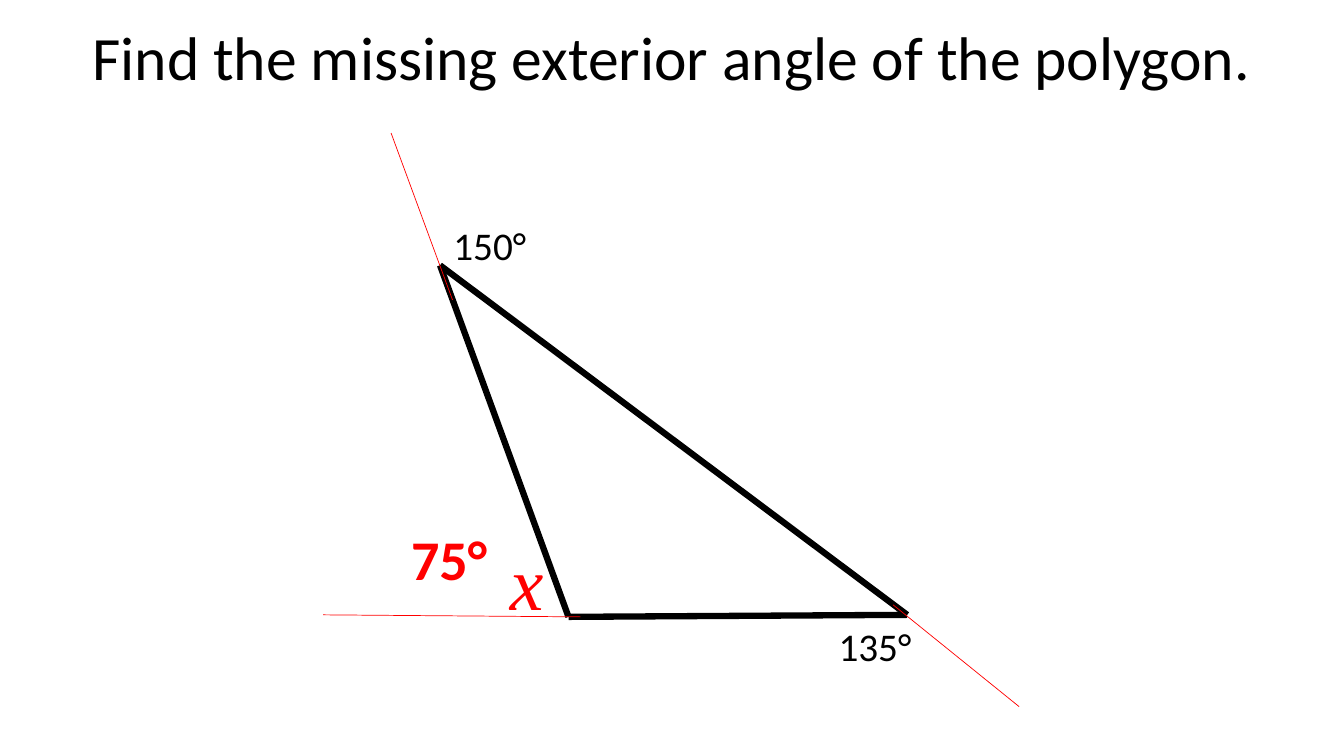
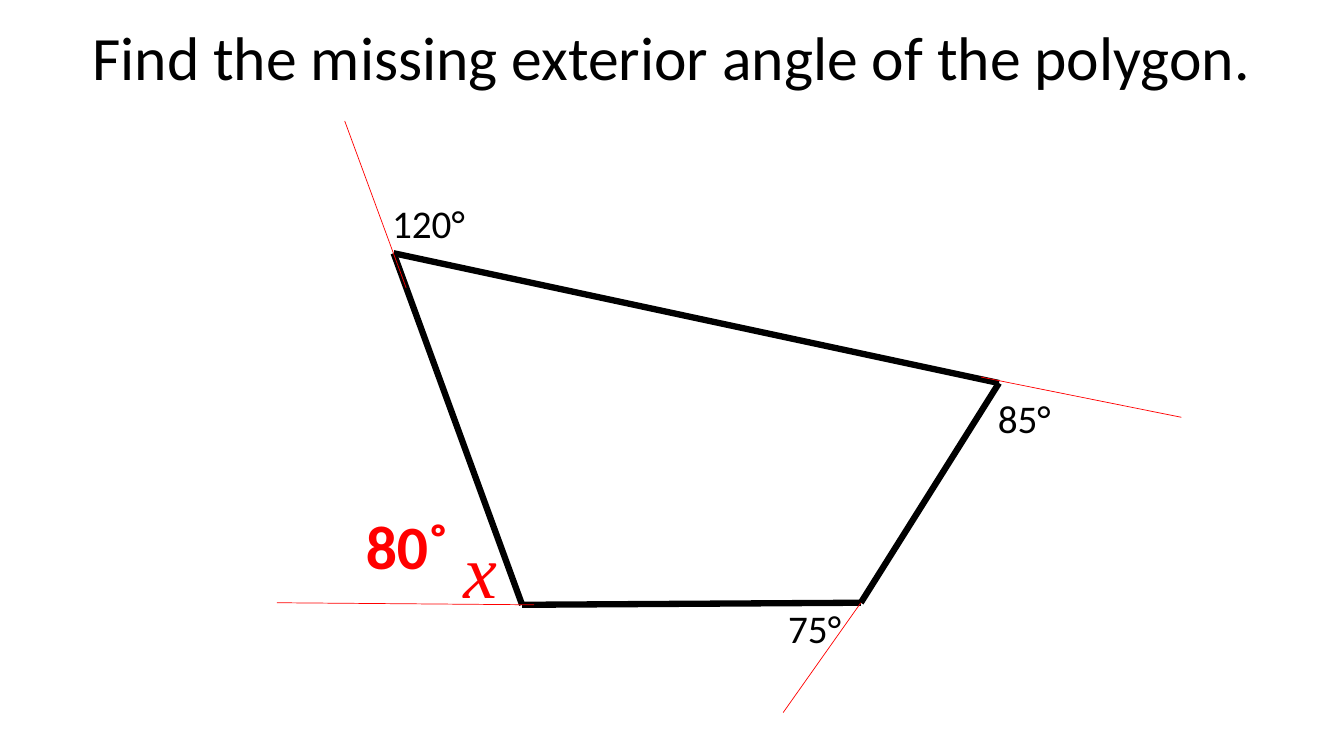
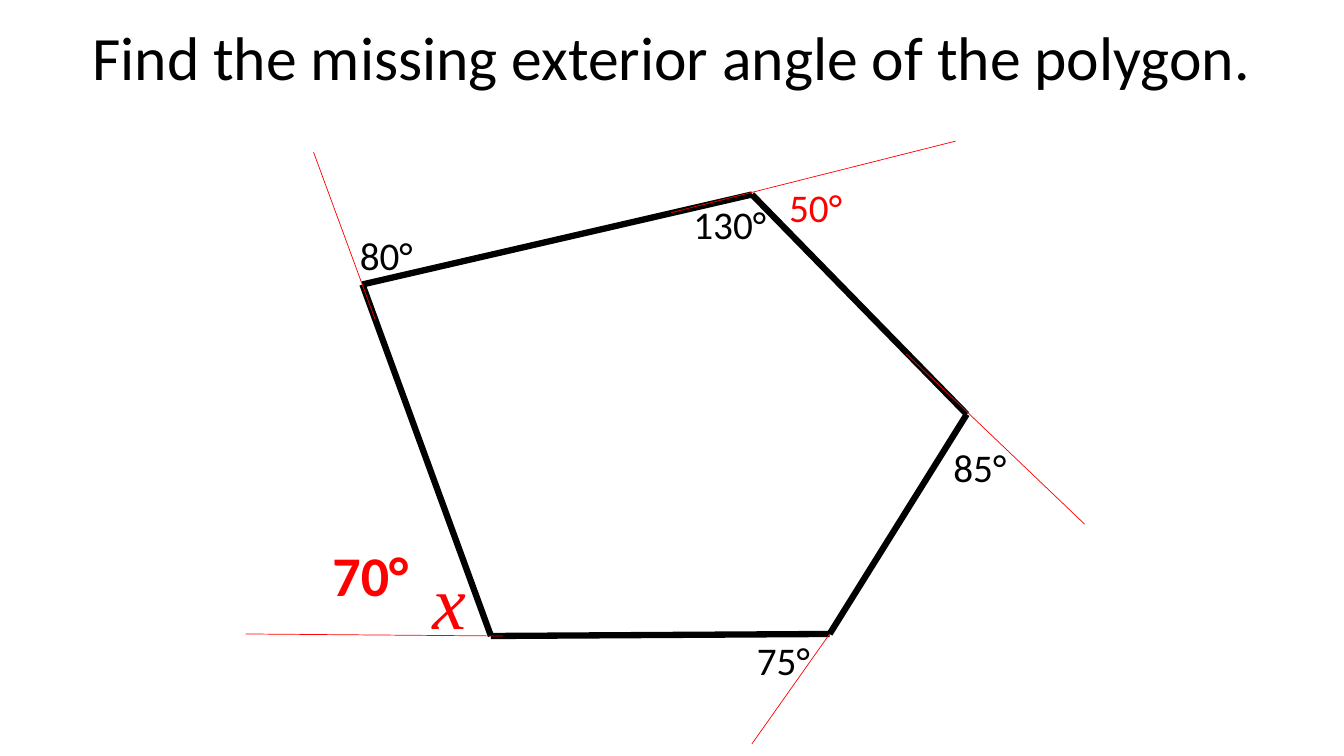
from dataclasses import dataclass

from lxml.etree import SubElement
from pptx import Presentation
from pptx.dml.color import RGBColor as Rgb
from pptx.enum.shapes import MSO_CONNECTOR as Link
from pptx.enum.text import MSO_AUTO_SIZE as Fit, PP_ALIGN as Align
from pptx.oxml.ns import qn
from pptx.util import Inches, Pt

WIDE, HIGH = Inches(13.33), Inches(7.5)


@dataclass(frozen=True)
class Theme:
    ink: Rgb = Rgb(0, 0, 0)
    red: Rgb = Rgb(255, 0, 0)
    sans: str = "Calibri"
    serif: str = "Times New Roman"
    title: int = 44
    label: int = 28
    answer: int = 40
    var: int = 54
    side: float = 4.5
    ray: float = 0.5


THEME = Theme()
TITLE = "Find the missing exterior angle of the polygon."

TOP = (-9.56, -46.5)
RIGHT = (25.2, -0.27)
UP_RAY = ((-8.63, -41.93), (-13.2, -64))
LEFT_RAY = ((0.9, 0), (-18.25, -0.27))
DOWN_RAY = ((19.42, 14.26), RIGHT)
VAR = (-5.1, -11.47)
RIGHT_TAG = (19.05, -0.67)


def place(share):
    x, y = share
    return round(WIDE * x / 100), round(HIGH * y / 100)


def shift(base, step):
    return base[0] + step[0], base[1] + step[1]


def stroke(slide, start, end, color, width):
    line = slide.shapes.add_connector(Link.STRAIGHT, *place(start), *place(end))
    line.line.color.rgb = color
    line.line.width = Pt(width)
    SubElement(line.element.spPr, qn("a:effectLst"))


def write(slide, text, spot, area, size, color=THEME.ink, face=THEME.sans,
          bold=False, slant=False, align=Align.LEFT):
    box = slide.shapes.add_textbox(*place(spot), *place(area))
    frame = box.text_frame
    frame.word_wrap = True
    frame.auto_size = Fit.SHAPE_TO_FIT_TEXT
    para = frame.paragraphs[0]
    para.text = text
    para.alignment = align
    font = para.font
    font.name, font.size, font.color.rgb = face, Pt(size), color
    font.bold, font.italic = bold, slant


def tag(slide, text, spot, color=THEME.ink):
    write(slide, text, spot, (9.23, 7.6), THEME.label, color)


def reply(slide, text, spot, size=THEME.answer):
    write(slide, text, spot, (8.7, 10.27), size, THEME.red, bold=True)


def ray(slide, start, end):
    stroke(slide, start, end, THEME.red, THEME.ray)


def figure(deck, base, far=(), rays=(), down=True):
    slide = deck.slides.add_slide(deck.slide_layouts[6])
    nodes = [base, shift(base, RIGHT), *far, shift(base, TOP)]
    for start, end in zip(nodes, nodes[1:] + nodes[:1]):
        stroke(slide, start, end, THEME.ink, THEME.side)
    near = [UP_RAY, LEFT_RAY] + [DOWN_RAY] * down
    for start, end in near:
        ray(slide, shift(base, start), shift(base, end))
    for start, end in rays:
        ray(slide, start, end)
    if down:
        tag(slide, "75°", shift(base, RIGHT_TAG))
    write(slide, "x", shift(base, VAR), (6.15, 13.47), THEME.var,
          THEME.red, THEME.serif, slant=True)
    write(slide, TITLE, (0, 1.87), (100, 11.2), THEME.title,
          align=Align.CENTER)
    return slide


def three(deck):
    slide = figure(deck, (42.3, 81.6),
                   rays=[((66.45, 80), (75.83, 93.47))], down=False)
    tag(slide, "150°", (33, 28.67))
    tag(slide, "135°", (61.65, 81.6))
    reply(slide, "75°", (29.85, 68.67))


def four(deck):
    slide = figure(deck, (38.85, 80), far=[(74.33, 50.67)],
                   rays=[((72.98, 49.87), (87.9, 55.2))])
    tag(slide, "120°", (28.43, 25.73))
    tag(slide, "85°", (73.5, 51.47))
    reply(slide, "80˚", (26.48, 66.53), THEME.title)


def five(deck):
    slide = figure(deck, (36.53, 84.13),
                   far=[(71.93, 54.8), (55.95, 25.73)],
                   rays=[((71.1, 18.67), (49.95, 28.13)),
                         ((80.7, 69.33), (67.43, 46.8))])
    tag(slide, "80°", (26.03, 30))
    tag(slide, "85°", (70.2, 58))
    tag(slide, "130°", (50.85, 25.87))
    tag(slide, "50°", (57.98, 23.6), THEME.red)
    reply(slide, "70°", (24, 70.8))


def main():
    deck = Presentation()
    deck.slide_width, deck.slide_height = WIDE, HIGH
    for build in (three, four, five):
        build(deck)
    deck.save("out.pptx")


if __name__ == "__main__":
    main()
